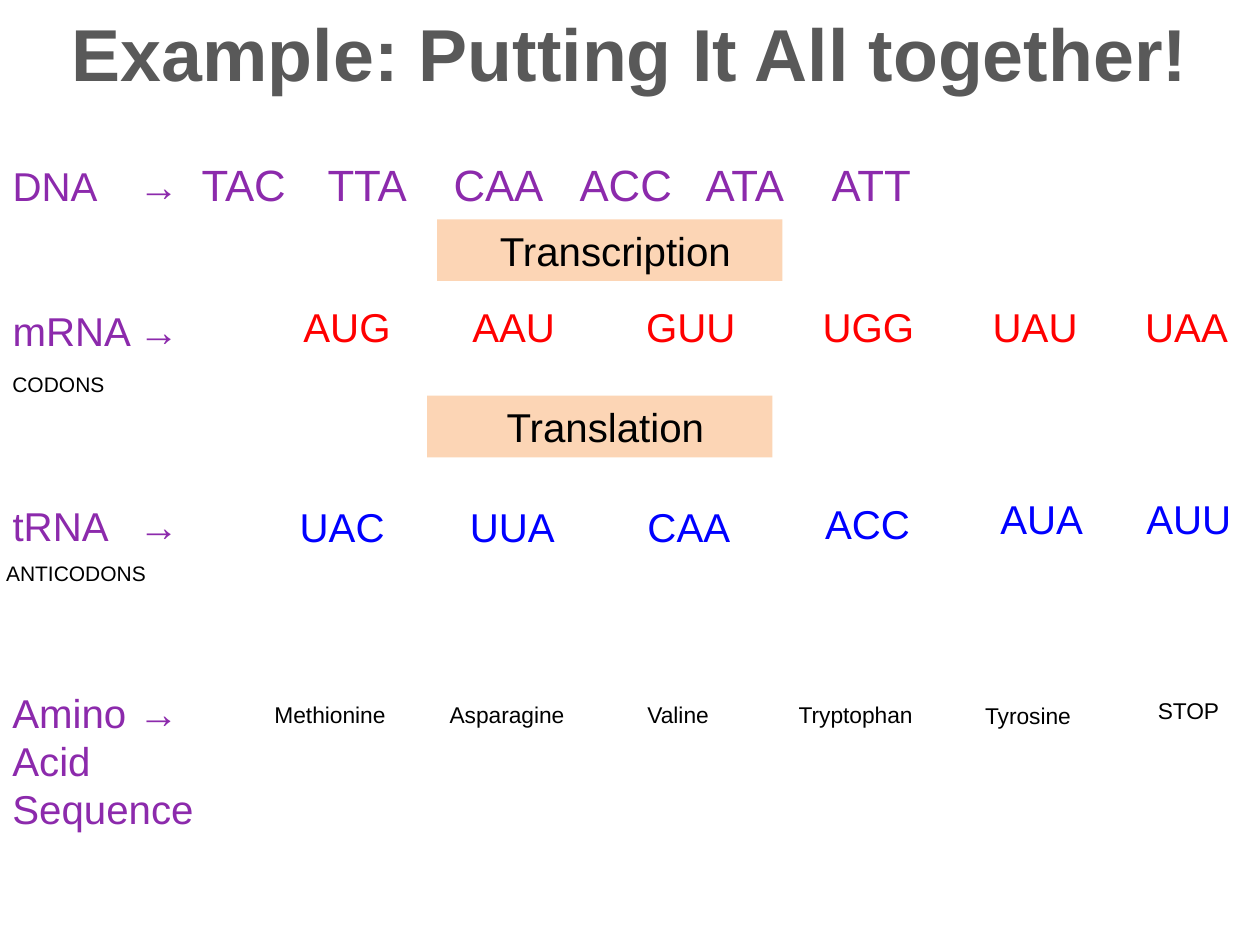
from dataclasses import dataclass

from lxml.etree import SubElement
from pptx import Presentation
from pptx.dml.color import RGBColor
from pptx.enum.shapes import MSO_SHAPE as Shape
from pptx.enum.text import MSO_ANCHOR as Anchor, MSO_AUTO_SIZE as AutoSize, PP_ALIGN as Align
from pptx.oxml.ns import qn
from pptx.util import Pt

PX = 9144
FONT = "Arial"
GREY = RGBColor(0x59, 0x59, 0x59)
PURPLE = RGBColor(0x8C, 0x2A, 0xAC)
RED = RGBColor(0xFF, 0, 0)
BLUE = RGBColor(0, 0, 0xFF)
BLACK = RGBColor(0, 0, 0)
PEACH = RGBColor(0xFC, 0xD5, 0xB5)
DNA_TABS = (138, 231, 364, 491, 628, 766, 872)
AMINO_TABS = (135,)


@dataclass(frozen=True)
class Label:
    text: str
    x: int
    y: int
    w: int


@dataclass(frozen=True)
class LabelRow:
    size: int
    color: RGBColor
    h: int
    labels: tuple[Label, ...]


@dataclass(frozen=True)
class Step:
    text: str
    x: int
    y: int


ROWS = (
    LabelRow(23, RED, 49, (
        Label("AUG", 231, 235, 130), Label("AAU", 365, 235, 123),
        Label("GUU", 503, 235, 110), Label("UGG", 643, 235, 101),
        Label("UAU", 778, 235, 101), Label("UAA", 899, 235, 87))),
    LabelRow(12, BLACK, 30, (
        Label("CODONS", 0, 290, 176), Label("ANTICODONS", -5, 440, 176))),
    LabelRow(23, BLUE, 49, (
        Label("UAC", 228, 394, 130), Label("UUA", 363, 394, 139),
        Label("CAA", 504, 394, 139), Label("ACC", 645, 391, 139),
        Label("AUA", 784, 387, 139), Label("AUU", 900, 387, 90))),
    LabelRow(13, BLACK, 32, (
        Label("Methionine", 208, 551, 153), Label("Asparagine", 347, 551, 153),
        Label("Valine", 504, 551, 143), Label("Tryptophan", 624, 551, 153),
        Label("Tyrosine", 772, 552, 153), Label("STOP", 909, 548, 71))),
)
STEPS = (Step("Transcription", 347, 174), Step("Translation", 339, 314))


def place(s, x: int, y: int, w: int, h: int) -> None:
    """Move and size a shape in px."""
    s.left, s.top, s.width, s.height = (v * PX for v in (x, y, w, h))


def style(target, size: int, color: RGBColor, bold: bool = False) -> None:
    """Set the font of a paragraph or run."""
    f = target.font
    f.name, f.size, f.bold = FONT, Pt(size), bold
    f.color.rgb = color


def set_tabs(p, stops: tuple[int, ...]) -> None:
    """Give a paragraph plain, unbulleted layout with left tab stops."""
    pPr = p._p.get_or_add_pPr()
    pPr.set("marL", "0")
    pPr.set("indent", "0")
    SubElement(pPr, qn("a:buNone"))
    tabs = SubElement(pPr, qn("a:tabLst"))
    for stop in stops:
        SubElement(tabs, qn("a:tab"), pos=str(stop * PX), algn="l")


def add_label(slide, label: Label, row: LabelRow) -> None:
    """Add one text label of a row."""
    s = slide.shapes.add_textbox(0, 0, 0, 0)
    place(s, label.x, label.y, label.w, row.h)
    s.text_frame.word_wrap = True
    p = s.text_frame.paragraphs[0]
    p.text = label.text
    style(p, row.size, row.color)


def add_step(slide, step: Step) -> None:
    """Add a filled box naming a process step."""
    s = slide.shapes.add_shape(Shape.RECTANGLE, 0, 0, 0, 0)
    place(s, step.x, step.y, 274, 49)
    s.shadow.inherit = False
    s.fill.solid()
    s.fill.fore_color.rgb = PEACH
    s.line.fill.background()
    tf = s.text_frame
    tf.word_wrap = True
    tf.margin_left = 19 * PX
    p = tf.paragraphs[0]
    p.text = step.text
    p.alignment = Align.CENTER
    style(p, 23, BLACK)


def fill_title(s) -> None:
    """Write the slide title."""
    place(s, 32, 0, 936, 82)
    tf = s.text_frame
    tf.auto_size = AutoSize.NONE
    tf.vertical_anchor = Anchor.MIDDLE
    p = tf.paragraphs[0]
    p.text = "Example: Putting It All together!"
    p.alignment = Align.CENTER
    style(p, 42, GREY, bold=True)


def fill_body(s) -> None:
    """Write the nucleic acid rows, with the DNA triplets on the first."""
    place(s, 0, 120, 1000, 440)
    tf = s.text_frame
    tf.auto_size = AutoSize.NONE
    tf.vertical_anchor = Anchor.TOP
    for i, (name, gap) in enumerate((("DNA", 0), ("mRNA", 55), ("tRNA", 84))):
        p = tf.add_paragraph() if i else tf.paragraphs[0]
        p.space_before = Pt(gap)
        set_tabs(p, DNA_TABS)
        r = p.add_run()
        r.text = f"{name}\t→"
        style(r, 23, PURPLE)
        if name == "DNA":
            r = p.add_run()
            r.text = "\tTAC\tTTA\tCAA\tACC\tATA\tATT"
            style(r, 25, PURPLE)


def add_amino_heading(slide) -> None:
    """Add the three-line heading of the amino acid row."""
    s = slide.shapes.add_textbox(0, 0, 0, 0)
    place(s, 0, 541, 214, 126)
    tf = s.text_frame
    tf.word_wrap = True
    tf.text = "Amino\t→\nAcid\nSequence"
    for p in tf.paragraphs:
        set_tabs(p, AMINO_TABS)
        style(p, 23, PURPLE)


def main() -> None:
    """Build the slide and save it."""
    prs = Presentation()
    prs.slide_width, prs.slide_height = 1000 * PX, 750 * PX
    slide = prs.slides.add_slide(prs.slide_layouts[1])
    fill_title(slide.shapes.title)
    fill_body(slide.placeholders[1])
    for row in ROWS:
        for label in row.labels:
            add_label(slide, label, row)
    add_amino_heading(slide)
    for step in STEPS:
        add_step(slide, step)
    prs.save("out.pptx")


if __name__ == "__main__":
    main()
